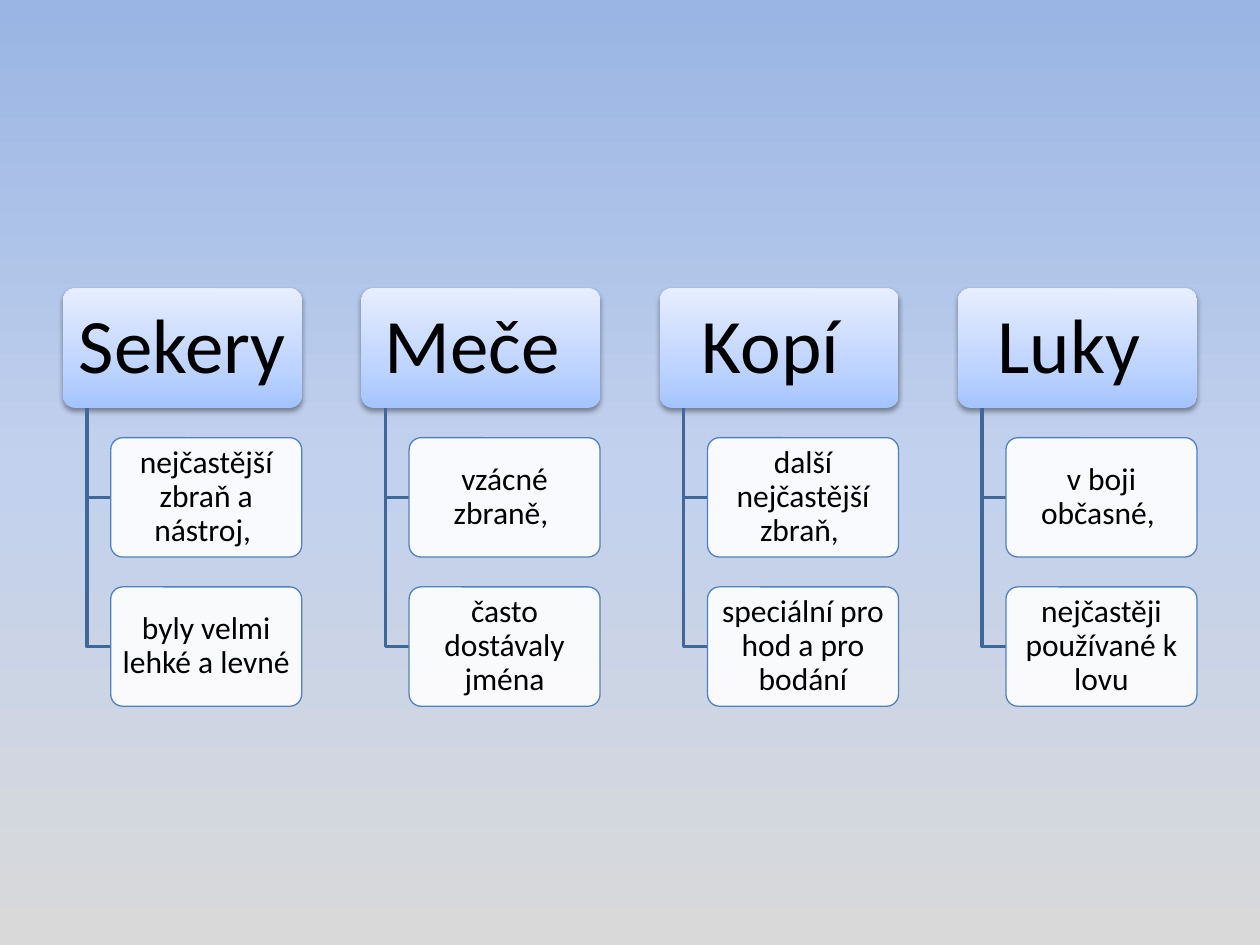
import lxml.etree
import pptx
import pptx.dml.color
import pptx.enum.shapes
import pptx.enum.text
import pptx.oxml.ns
import pptx.util

RGBColor = pptx.dml.color.RGBColor
BLACK = RGBColor(0x00, 0x00, 0x00)
WHITE = RGBColor(0xFF, 0xFF, 0xFF)
CARD_LINE = RGBColor(0x4F, 0x81, 0xBD)
BRANCH = RGBColor(0x3F, 0x67, 0x97)
BACKGROUND = [(0, RGBColor(0x9A, 0xB5, 0xE4)), (50, RGBColor(0xC2, 0xD1, 0xED)),
              (100, RGBColor(0xD9, 0xD9, 0xD9))]
HEADER = [(0, RGBColor(0xA4, 0xC4, 0xFF)), (35, RGBColor(0xBF, 0xD4, 0xFF)),
          (100, RGBColor(0xE6, 0xEE, 0xFF))]

# Grid cells: a header is 10 x 5, columns and rows are a quarter of that apart.
HEAD_W, BOX_H = 10, 5
COL_STEP, ROW_STEP = 1.25 * HEAD_W, 1.25 * BOX_H
BRANCH_X, CARD_X = 1, 2
LEFT, TOP = 0.5, 2.29
CELL = (10 - 2 * LEFT) / (3 * COL_STEP + HEAD_W)

WEAPONS = [
    ("Sekery ", ["nejčastější zbraň a nástroj, ", "byly velmi lehké a levné"]),
    ("Meče ", ["vzácné zbraně, ", "často dostávaly jména"]),
    ("Kopí ", ["další nejčastější zbraň, ", "speciální pro hod a pro bodání"]),
    ("Luky ", ["v boji občasné, ", "nejčastěji používané k lovu"]),
]


def add_xml(parent, tag, **attributes):
    return lxml.etree.SubElement(parent, pptx.oxml.ns.qn(tag), attributes)


def add_color(parent, color):
    return add_xml(parent, "a:srgbClr", val=str(color))


def set_gradient(fill, element, stops, angle):
    """Fill with any number of (percent, colour) stops; angle is counter-clockwise."""
    fill.gradient()
    fill.gradient_angle = angle
    stop_list = element.find(".//" + pptx.oxml.ns.qn("a:gsLst"))
    stop_list.clear()
    for percent, color in stops:
        add_color(add_xml(stop_list, "a:gs", pos=str(percent * 1000)), color)


class HierarchySlide:
    """Current slide and the style of its hierarchy; positions are in grid cells."""

    font = "Calibri"

    def __init__(self, prs):
        self.s = prs.slides.add_slide(prs.slide_layouts[6])
        set_gradient(self.s.background.fill, self.s._element, BACKGROUND, 270)

    def point(self, col, row):
        return (pptx.util.Inches(LEFT + col * CELL), pptx.util.Inches(TOP + row * CELL))

    def box(self, col, row, width, text, size, insets):
        sp = self.s.shapes.add_shape(
            pptx.enum.shapes.MSO_SHAPE.ROUNDED_RECTANGLE, *self.point(col, row),
            pptx.util.Inches(width * CELL), pptx.util.Inches(BOX_H * CELL))
        sp.adjustments[0] = 0.1
        sp.shadow.inherit = False
        tf = sp.text_frame
        tf.word_wrap = True
        tf.vertical_anchor = pptx.enum.text.MSO_ANCHOR.MIDDLE
        tf.margin_left = tf.margin_right = pptx.util.Inches(insets[0])
        tf.margin_top = tf.margin_bottom = pptx.util.Inches(insets[1])
        p = tf.paragraphs[0]
        p.text = text
        p.alignment = pptx.enum.text.PP_ALIGN.CENTER
        p.line_spacing = 0.9
        p.font.name = self.font
        p.font.size = pptx.util.Pt(size)
        p.font.color.rgb = BLACK
        return sp

    def header(self, col, row, text):
        sp = self.box(col, row, HEAD_W, text, 44, (0.08, 0.06))
        spPr = sp._element.spPr
        set_gradient(sp.fill, spPr, HEADER, 90)
        sp.line.fill.background()
        effects = spPr.find(pptx.oxml.ns.qn("a:effectLst"))
        shadow = add_xml(effects, "a:outerShdw", blurRad="40000", dist="20000",
                         dir="5400000", rotWithShape="0")
        add_xml(add_color(shadow, BLACK), "a:alpha", val="38000")

    def card(self, col, row, text):
        sp = self.box(col, row, HEAD_W - CARD_X, text, 18, (0.04, 0.03))
        sp.fill.solid()
        sp.fill.fore_color.rgb = WHITE
        color = sp._element.spPr.find(".//" + pptx.oxml.ns.qn("a:srgbClr"))
        add_xml(color, "a:alpha", val="90000")
        sp.line.color.rgb = CARD_LINE
        sp.line.width = pptx.util.Pt(0.75)

    def branch(self, col, row, end_col, end_row):
        """Draw an elbow going down, then right."""
        builder = self.s.shapes.build_freeform(*self.point(col, row))
        builder.add_line_segments(
            [self.point(col, end_row), self.point(end_col, end_row)], close=False)
        sp = builder.convert_to_shape()
        sp.shadow.inherit = False
        sp.fill.background()
        sp.line.color.rgb = BRANCH
        sp.line.width = pptx.util.Pt(2)


def main():
    prs = pptx.Presentation()
    prs.slide_width = pptx.util.Inches(10)
    prs.slide_height = pptx.util.Inches(7.5)
    slide = HierarchySlide(prs)
    for i, (weapon, facts) in enumerate(WEAPONS):
        col = i * COL_STEP
        slide.header(col, 0, weapon)
        for j, fact in enumerate(facts, start=1):
            row = j * ROW_STEP
            slide.branch(col + BRANCH_X, BOX_H, col + CARD_X, row + BOX_H / 2)
            slide.card(col + CARD_X, row, fact)
    prs.save("out.pptx")


if __name__ == "__main__":
    main()
